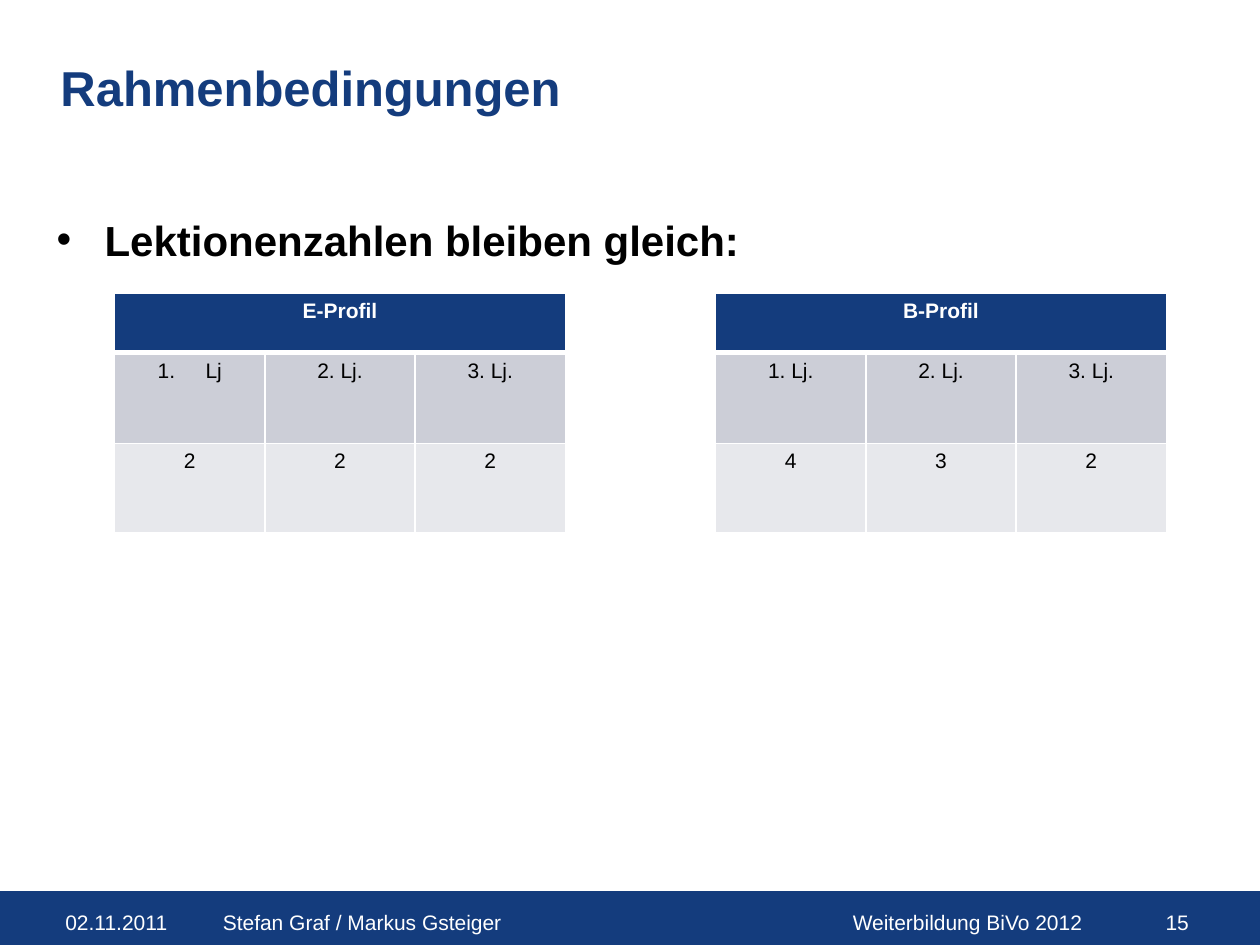
from lxml.etree import SubElement
from pptx import Presentation
from pptx.dml.color import RGBColor
from pptx.enum.shapes import MSO_SHAPE
from pptx.enum.text import MSO_ANCHOR, MSO_AUTO_SIZE, PP_ALIGN
from pptx.oxml.ns import qn
from pptx.util import Inches, Pt

COLUMNS, ROWS = 100, 75
UNIT = Inches(0.1)
NAVY, WHITE, BLACK = "143C7D", "FFFFFF", "000000"
HEADER_ROW, LABEL_ROW, NUMBER_ROW = range(3)
ROW_HEIGHTS = (4.7, 7.2, 7.1)
ROW_FILLS = (NAVY, "CCCED7", "E7E8EC")
PROFILES = {
    "E-Profil": (("Lj", "2. Lj.", "3. Lj."), ("2", "2", "2")),
    "B-Profil": (("1. Lj.", "2. Lj.", "3. Lj."), ("4", "3", "2")),
}


def grid(*counts):
    """Turn counts of grid units into slide lengths."""
    return [round(count * UNIT) for count in counts]


def colour(hex_value):
    """Return the colour for a hex string."""
    return RGBColor.from_string(hex_value)


def set_all(target, values):
    """Set every attribute named in a dict of format values."""
    for name, value in values.items():
        setattr(target, name, value)


def format_font(para, size, hex_value, bold=False):
    """Give a paragraph its font."""
    set_all(para.font, {"name": "Arial", "size": Pt(size), "bold": bold})
    para.font.color.rgb = colour(hex_value)


def add_marker(para, tag, indent=3.8, **attributes):
    """Give a paragraph a hanging bullet or number."""
    properties = para._p.get_or_add_pPr()
    [width] = grid(indent)
    properties.set("marL", str(width))
    properties.set("indent", str(-width))
    SubElement(properties, qn(tag), **attributes)


def fill_placeholder(holder, box, text):
    """Move a placeholder into its box and return its paragraph."""
    set_all(holder, dict(zip(("left", "top", "width", "height"), grid(*box))))
    frame = holder.text_frame
    frame.text = text
    set_all(frame, {"auto_size": MSO_AUTO_SIZE.NONE, "word_wrap": True,
                    "vertical_anchor": MSO_ANCHOR.TOP, "margin_top": Inches(0.08)})
    para = frame.paragraphs[0]
    set_all(para, {"alignment": PP_ALIGN.LEFT, "space_before": Pt(0)})
    return para


def add_heading(page, box):
    """Place the slide title."""
    para = fill_placeholder(page.shapes.title, box, "Rahmenbedingungen")
    format_font(para, 28, NAVY, True)


def add_list(page, box):
    """Place the bulleted statement."""
    para = fill_placeholder(page.placeholders[1], box, "Lektionenzahlen bleiben gleich:")
    add_marker(para, "a:buChar", char="•")
    format_font(para, 24, BLACK, True)


def add_borders(cell, row):
    """Draw white cell borders, thicker below the header."""
    thick_side = {HEADER_ROW: "B", LABEL_ROW: "T"}.get(row)
    properties = cell._tc.get_or_add_tcPr()
    for side in "LRTB":
        width = Pt(3 if side == thick_side else 1)
        line = SubElement(properties, qn(f"a:ln{side}"), w=str(width))
        solid = SubElement(line, qn("a:solidFill"))
        SubElement(solid, qn("a:srgbClr"), val=WHITE)


def write_cell(cell, row, text):
    """Fill a table cell and centre its text."""
    cell.fill.solid()
    cell.fill.fore_color.rgb = colour(ROW_FILLS[row])
    cell.text = text
    para = cell.text_frame.paragraphs[0]
    para.alignment = PP_ALIGN.CENTER
    if text == "Lj":
        add_marker(para, "a:buAutoNum", type="arabicPeriod")
    is_header = row == HEADER_ROW
    format_font(para, 12, WHITE if is_header else BLACK, is_header)


def add_lesson_table(page, box):
    """Place both profiles in one table with an open column between them."""
    years = 3
    column_count = years * len(PROFILES) + 1
    table = page.shapes.add_table(len(ROW_HEIGHTS), column_count, *grid(*box)).table
    set_all(table, {"first_row": False, "horz_banding": False})
    for row, height in zip(table.rows, grid(*ROW_HEIGHTS)):
        row.height = height
    for column in table.columns:
        [column.width] = grid(box[2] / column_count)
    for row in range(len(ROW_HEIGHTS)):
        for column in range(column_count):
            cell = table.cell(row, column)
            add_borders(cell, row)
            cell.fill.background()
            format_font(cell.text_frame.paragraphs[0], 12, BLACK)
    for index, (profile, rows) in enumerate(PROFILES.items()):
        first = index * (years + 1)
        header = table.cell(HEADER_ROW, first)
        header.merge(table.cell(HEADER_ROW, first + years - 1))
        write_cell(header, HEADER_ROW, profile)
        for row, texts in enumerate(rows, LABEL_ROW):
            for column, text in enumerate(texts, first):
                write_cell(table.cell(row, column), row, text)


def add_footer(page, box):
    """Place the footer band and its texts."""
    left, top, width, height = box
    band = page.shapes.add_shape(MSO_SHAPE.RECTANGLE, *grid(*box))
    band.shadow.inherit = False
    band.fill.solid()
    band.fill.fore_color.rgb = band.line.color.rgb = colour(NAVY)
    band.line.width = Pt(0.75)
    entries = (
        ("02.11.2011", 4.2, 10.8, PP_ALIGN.LEFT),
        ("Stefan Graf / Markus Gsteiger", 16.7, 41.2, PP_ALIGN.LEFT),
        ("Weiterbildung BiVo 2012", 66.7, 23.3, PP_ALIGN.LEFT),
        ("15 ", 90, 5.8, PP_ALIGN.RIGHT),
    )
    for text, start, span, alignment in entries:
        label = page.shapes.add_textbox(*grid(start, top + 0.9, span, height - 0.9))
        label.text_frame.word_wrap = True
        para = label.text_frame.paragraphs[0]
        para.text = text
        para.alignment = alignment
        format_font(para, 12, WHITE)


def main():
    """Build and save the slide."""
    deck = Presentation()
    deck.slide_width, deck.slide_height = grid(COLUMNS, ROWS)
    page = deck.slides.add_slide(deck.slide_layouts[1])
    add_footer(page, (-0.4, 70.8, COLUMNS + 0.4, 4.2))
    add_heading(page, (3.8, 3.8, 73, 9.3))
    add_list(page, (3.5, 16.2, 91.1, 50.4))
    add_lesson_table(page, (9.1, 23.3, 83.5, sum(ROW_HEIGHTS)))
    deck.save("out.pptx")


if __name__ == "__main__":
    main()
